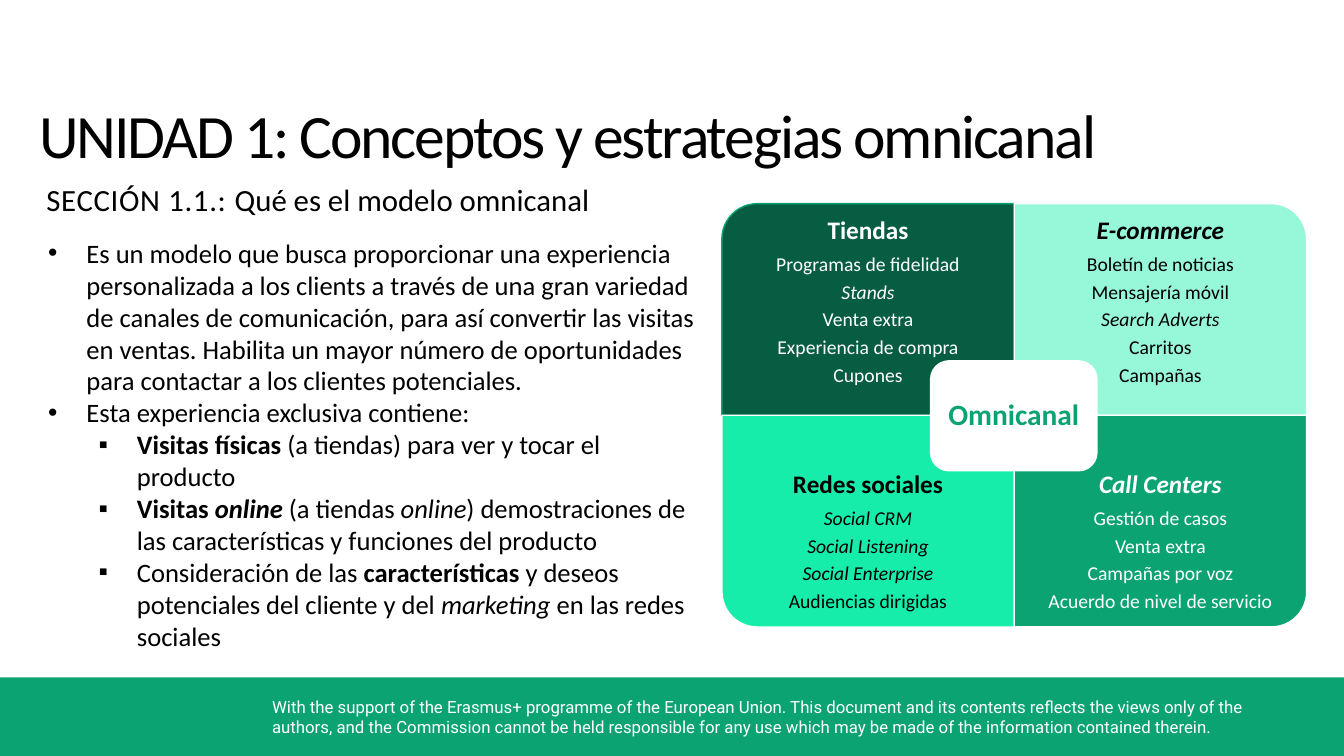
from pptx import Presentation, util as u
from pptx.dml.color import RGBColor
from pptx.enum import shapes, text
from pptx.oxml import ns
from lxml import etree

WIDE, HIGH = 13.33, 7.5
GREEN, WHITE, BLACK = "0CA373", "FFFFFF", "000000"
KIND = shapes.MSO_SHAPE
MID, TOP, LOW = (text.MSO_ANCHOR.MIDDLE, text.MSO_ANCHOR.TOP, text.MSO_ANCHOR.BOTTOM)
CENTER = {"alignment": text.PP_ALIGN.CENTER, "line_spacing": 0.9}

TITLE = "UNIDAD 1: Conceptos y estrategias omnicanal"
SECTION = [("SECCIÓN 1.1.: ", "", 50), ("Qué es el modelo omnicanal", "")]
POINTS = [
    (0, [("Es un modelo que busca proporcionar una experiencia personalizada a los "
          "clients a través de una gran variedad de canales de comunicación, para así "
          "convertir las visitas en ventas. Habilita un mayor número de oportunidades "
          "para contactar a los clientes potenciales.", "")]),
    (0, [("Esta experiencia exclusiva contiene:", "")]),
    (1, [("Visitas físicas ", "b"), ("(a tiendas) para ver y tocar el producto", "")]),
    (1, [("Visitas ", "b"), ("online ", "bi"), ("(a tiendas ", ""), ("online", "i"),
         (") demostraciones de las características y funciones del producto", "")]),
    (1, [("Consideración de las ", ""), ("características", "b"),
         (" y deseos potenciales del cliente y del ", ""), ("marketing ", "i"),
         ("en las redes sociales", "")]),
]
QUADS = [
    ("075D42", GREEN, WHITE, 270, [
        ("Tiendas", "b"), ("Programas de fidelidad", ""), ("Stands", "i"),
        ("Venta extra", ""), ("Experiencia de compra", ""), ("Cupones", "")]),
    ("97F7D9", WHITE, BLACK, 0, [
        ("E-commerce", "bi"), ("Boletín de noticias", ""), ("Mensajería móvil", ""),
        ("Search Adverts", "i"), ("Carritos", ""), ("Campañas", "")]),
    ("17EDAB", WHITE, BLACK, 180, [
        ("Redes sociales", "b"), ("Social CRM", "i"), ("Social Listening", "i"),
        ("Social Enterprise", "i"), ("Audiencias dirigidas", "")]),
    (GREEN, WHITE, WHITE, 90, [
        ("Call Centers", "bi"), ("Gestión de casos", ""), ("Venta extra", ""),
        ("Campañas por voz", ""), ("Acuerdo de nivel de servicio", "")]),
]
SUPPORT = ("With the support of the Erasmus+ programme of the European Union. This "
           "document and its contents reflects the views only of the authors, and the "
           "Commission cannot be held responsible for any use which may be made of the "
           "information contained therein.")


def tint(code):
    """Turn a hex string into a colour."""
    return RGBColor.from_string(code)


def apply(item, form):
    """Set every attribute listed in a dict."""
    for name, value in form.items():
        setattr(item, name, value)


def block(slide, kind, box, fill, edge=None, turn=0):
    """Draw a filled shape in a box, turned by some degrees."""
    left, top, width, height = box
    if turn % 180:
        left, top = left + (width - height) / 2, top + (height - width) / 2
        width, height = height, width
    shape = slide.shapes.add_shape(kind, *map(u.Inches, (left, top, width, height)))
    shape.shadow.inherit = False
    shape.rotation = turn
    shape.fill.solid()
    shape.fill.fore_color.rgb = tint(fill)
    if edge:
        shape.line.color.rgb = tint(edge)
        shape.line.width = u.Pt(1)
    else:
        shape.line.fill.background()
    return shape


def frame(slide, box, pads, anchor=TOP):
    """Add a wrapped text box with left, top, right and bottom pads."""
    area = slide.shapes.add_textbox(*map(u.Inches, box)).text_frame
    sides = ("margin_left", "margin_top", "margin_right", "margin_bottom")
    apply(area, {"word_wrap": True, "vertical_anchor": anchor,
                 **dict(zip(sides, map(u.Inches, pads)))})
    return area


def line(area, first, runs, size, color, face="Calibri", form={}, level=None):
    """Write one paragraph of styled runs, bulleted if a level is given."""
    para = area.paragraphs[0] if first else area.add_paragraph()
    apply(para, form)
    if level is not None:
        para.level = level
        props = para._p.get_or_add_pPr()
        props.set("marL", str(u.Inches(0.38 + level * 0.5)))
        props.set("indent", str(u.Inches(-0.38)))
        etree.SubElement(props, ns.qn("a:buFont")).set("typeface", "Arial")
        etree.SubElement(props, ns.qn("a:buChar")).set("char", "•▪"[level])
    for words, style, *gap in runs:
        run = para.add_run()
        run.text = words
        apply(run.font, {"name": face, "size": u.Pt(size),
                         "bold": "b" in style, "italic": "i" in style})
        run.font.color.rgb = tint(color)
        if gap:
            run._r.get_or_add_rPr().set("spc", str(gap[0]))


def footer(slide, box):
    """Draw the green band with the support note."""
    left, top, width, height = box
    block(slide, KIND.RECTANGLE, box, GREEN)
    area = frame(slide, (left + 2.6, top + 0.14, 10.42, 0.5), (0.1, 0.05, 0.1, 0.05))
    line(area, True, [(SUPPORT, "")], 12, WHITE, "Roboto")


def heads(slide, box):
    """Write the title and the section line below it."""
    left, top, width, height = box
    area = frame(slide, (left, top, width, 0.75), (0.01, 0.01, 0, 0))
    line(area, True, [(TITLE, "", -150)], 44, BLACK)
    area = frame(slide, (left + 0.07, top + 0.82, 5.61, height - 0.82), (0.01, 0.02, 0, 0))
    line(area, True, SECTION, 22, BLACK)


def body(slide, box):
    """Write the two levels of bullets."""
    area = frame(slide, box, (0.1, 0.05, 0.1, 0.05))
    for row, (level, runs) in enumerate(POINTS):
        line(area, row == 0, runs, 19, BLACK, level=level)


def matrix(slide, box):
    """Draw the four channels around the central label."""
    left, top, width, height = box
    wide, high = width / 2, height / 2
    for spot, (fill, edge, color, turn, items) in enumerate(QUADS):
        row, col = divmod(spot, 2)
        cell = (left + col * wide, top + row * high, wide, high)
        block(slide, KIND.ROUND_1_RECTANGLE, cell, fill, edge, turn)
        area = frame(slide, cell, (0.14,) * 4, LOW if row else TOP)
        for rank, item in enumerate(items):
            size, after = (14, 4.6) if rank else (18, 7)
            line(area, rank == 0, [item], size, color,
                 form={**CENTER, "space_after": u.Pt(after)})
    core = (left + wide - 0.83, top + high - 0.54, 1.65, 1.09)
    block(slide, KIND.ROUNDED_RECTANGLE, core, WHITE, WHITE)
    area = frame(slide, core, (0.09,) * 4, MID)
    line(area, True, [("Omnicanal", "b")], 21, GREEN, form=CENTER)


def main():
    """Build and save the slide."""
    deck = Presentation()
    apply(deck, {"slide_width": u.Inches(WIDE), "slide_height": u.Inches(HIGH)})
    slide = deck.slides.add_slide(deck.slide_layouts[6])
    footer(slide, (0, HIGH - 0.78, WIDE, 0.78))
    heads(slide, (0.38, 0.95, 11.58, 1.3))
    body(slide, (0.38, 2.3, 6.67, 4.26))
    matrix(slide, (7.16, 2.02, 5.8, 4.2))
    deck.save("out.pptx")


if __name__ == "__main__":
    main()
